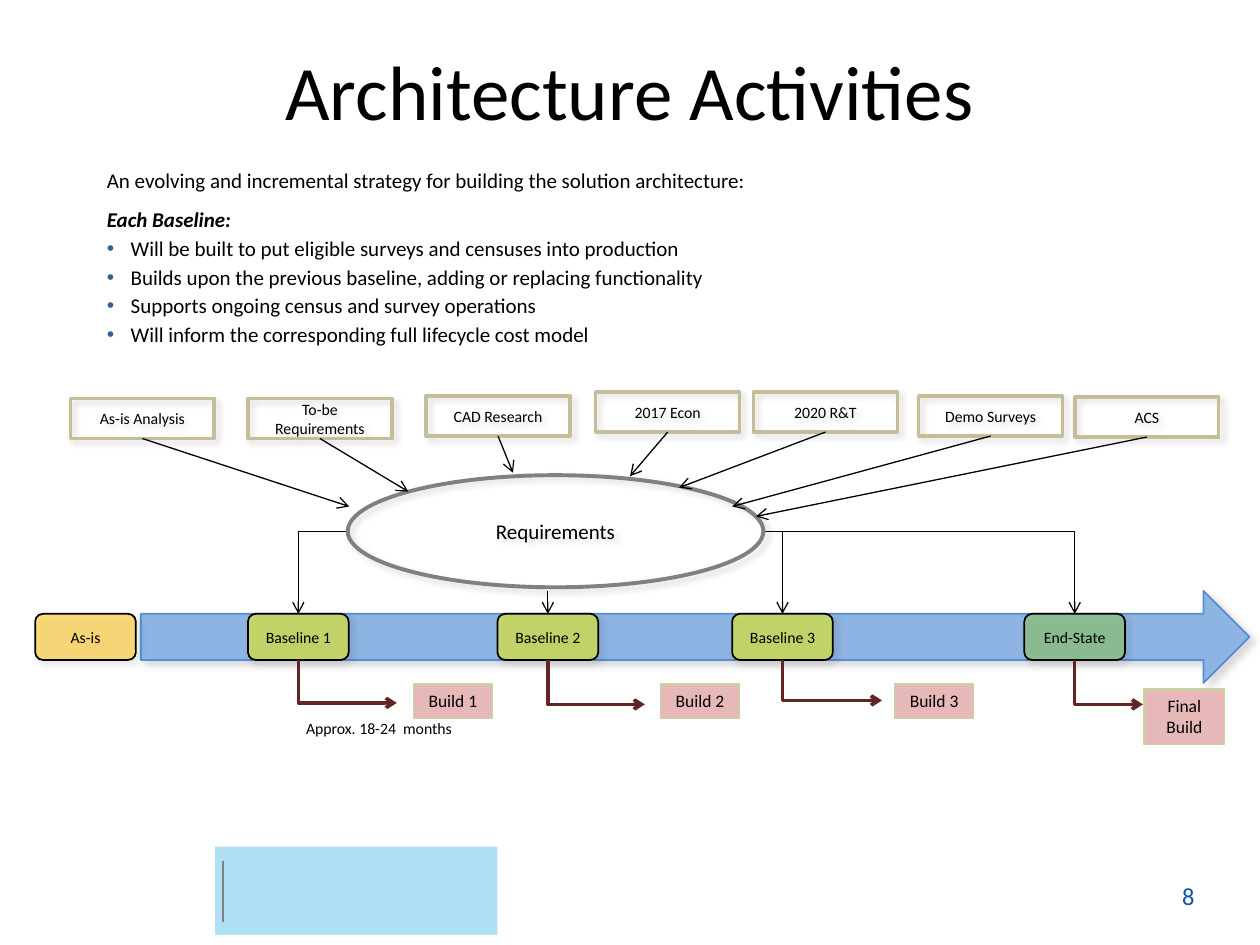
import pptx
import pptx.dml.color
import pptx.enum.shapes
import pptx.enum.text
import pptx.oxml
import pptx.oxml.ns
import pptx.util
from lxml import etree

Cm = pptx.util.Cm
Pt = pptx.util.Pt
RGBColor = pptx.dml.color.RGBColor
qn = pptx.oxml.ns.qn
SHAPE = pptx.enum.shapes.MSO_SHAPE
CONNECTOR = pptx.enum.shapes.MSO_CONNECTOR
ANCHOR = pptx.enum.text.MSO_ANCHOR
ALIGN = pptx.enum.text.PP_ALIGN
AUTO_SIZE = pptx.enum.text.MSO_AUTO_SIZE

BLACK = RGBColor(0x00, 0x00, 0x00)
GRAY = RGBColor(0x80, 0x80, 0x80)
SKY = RGBColor(0xB0, 0xE0, 0xF6)
NUMBER_BLUE = RGBColor(0x08, 0x58, 0xA8)
BULLET_BLUE = RGBColor(0x37, 0x60, 0x92)
ARROW_FILL = RGBColor(0x8E, 0xB4, 0xE3)
ARROW_LINE = RGBColor(0x55, 0x8E, 0xD5)
AMBER = RGBColor(0xFF, 0xC0, 0x00)
YELLOW = RGBColor(0xFF, 0xFF, 0x00)
GREEN = RGBColor(0x92, 0xD0, 0x50)
TAN = RGBColor(0xC4, 0xBD, 0x97)
MAROON = RGBColor(0x63, 0x25, 0x23)
PINK = RGBColor(0xE6, 0xB9, 0xB8)
LIGHT_GREEN = RGBColor(0xC3, 0xD6, 0x9B)

# Milestone label, colour, left within the timeline
MILESTONES = [("As-is", AMBER, 0), ("Baseline 1", YELLOW, 4.29), ("Baseline 2", YELLOW, 9.32),
              ("Baseline 3", YELLOW, 14.05), ("End-State", GREEN, 19.94)]
# Input label, left and top within the row, tip of its arrow from the ellipse's corner
INPUTS = [("As-is Analysis", 0, 0.13, 0.03, 0.63), ("To-be Requirements", 3.58, 0.13, 1.22, 0.33),
          ("CAD Research", 7.17, 0.08, 3.33, -0.05), ("2017 Econ", 10.59, 0, 5.69, 0.02),
          ("2020 R&T", 13.77, 0, 6.68, 0.25), ("Demo Surveys", 17.1, 0.08, 7.75, 0.63),
          ("ACS", 20.25, 0.1, 8.23, 0.83)]
# Build label, left from its milestone, top below the row, size, arrow gap, arrow drop
BUILDS = [("Build 1", 3.33, 0, 1.6, 0.69, 0.33, 0.38), ("Build 2", 3.28, 0, 1.6, 0.69, 0.31, 0.41),
          ("Build 3", 3.27, 0, 1.6, 0.69, 0.25, 0.33), ("Final Build", 2.41, 0.1, 1.63, 1.12, 0.02, 0.41)]


def write_text(paragraph, text, size=9, color=BLACK, bold=False, italic=False, align=ALIGN.LEFT):
    run = paragraph.add_run()
    run.text = text
    font = run.font
    font.name, font.size, font.bold, font.italic = "Calibri", Pt(size), bold, italic
    font.color.rgb = color
    paragraph.alignment = align


def move(shape, left, top, width, height):
    shape.left, shape.top, shape.width, shape.height = Cm(left), Cm(top), Cm(width), Cm(height)


def add_box(slide, kind, box, fill=None, alpha=None, line=None, width=1, shadow=True, text="", size=9):
    shape = slide.shapes.add_shape(kind, *map(Cm, box))
    if fill is None:
        shape.fill.background()
    else:
        shape.fill.solid()
        shape.fill.fore_color.rgb = fill
    properties = shape._element.spPr
    if alpha:
        color = properties.find(qn("a:solidFill"))[0]
        etree.SubElement(color, qn("a:alpha"), val=str(alpha * 1000))
    if line is None:
        shape.line.fill.background()
    else:
        shape.line.color.rgb = line
        shape.line.width = Pt(width)
    shape.shadow.inherit = False
    if shadow:
        outer = etree.SubElement(properties.find(qn("a:effectLst")), qn("a:outerShdw"), blurRad=str(Pt(4)),
                                 dist=str(Pt(3)), dir="2700000", algn="tl", rotWithShape="0")
        color = etree.SubElement(outer, qn("a:srgbClr"), val="000000")
        etree.SubElement(color, qn("a:alpha"), val="15000")
    if text:
        shape.text_frame.word_wrap = True
        shape.text_frame.vertical_anchor = ANCHOR.MIDDLE
        write_text(shape.text_frame.paragraphs[0], text, size=size, align=ALIGN.CENTER)
    return shape


def add_line(slide, start, end, color=BLACK, width=0.75, arrow=True, bend=None):
    """Draw a line; bend "across" goes sideways first, "down" goes down first."""
    kind = CONNECTOR.ELBOW if bend else CONNECTOR.STRAIGHT
    connector = slide.shapes.add_connector(kind, *map(Cm, start + end))
    connector.line.color.rgb = color
    connector.line.width = Pt(width)
    properties = connector._element.spPr
    if arrow:
        etree.SubElement(properties.find(qn("a:ln")), qn("a:tailEnd"), type="arrow")
    etree.SubElement(properties, qn("a:effectLst"))
    geometry = properties.find(qn("a:prstGeom"))
    if bend == "across":
        geometry.set("prst", "bentConnector2")
    elif bend == "down":
        guides = geometry.find(qn("a:avLst"))
        if guides is None:
            guides = etree.SubElement(geometry, qn("a:avLst"))
        etree.SubElement(guides, qn("a:gd"), name="adj1", fmla="val 0")
    return connector


def fill_title(slide, box):
    title = slide.shapes.title
    move(title, *box)
    title.text_frame.vertical_anchor = ANCHOR.TOP
    write_text(title.text_frame.paragraphs[0], "Architecture Activities", size=44, align=ALIGN.CENTER)


def set_bullet(paragraph, shown):
    properties = paragraph._p.get_or_add_pPr()
    indent = Cm(0.48) if shown else 0
    properties.set("marL", str(indent))
    properties.set("indent", str(-indent))
    if shown:
        color = etree.SubElement(properties, qn("a:buClr"))
        etree.SubElement(color, qn("a:srgbClr"), val=str(BULLET_BLUE))
        etree.SubElement(properties, qn("a:buFont"), typeface="Arial")
        etree.SubElement(properties, qn("a:buChar"), char="•")
    else:
        etree.SubElement(properties, qn("a:buNone"))


def fill_strategy(slide, box):
    body = slide.placeholders[1]
    move(body, *box)
    frame = body.text_frame
    frame.auto_size = AUTO_SIZE.SHAPE_TO_FIT_TEXT
    lines = ["An evolving and incremental strategy for building the solution architecture:",
             "Each Baseline:",
             "Will be built to put eligible surveys and censuses into production",
             "Builds upon the previous baseline, adding or replacing functionality",
             "Supports ongoing census and survey operations",
             "Will inform the corresponding full lifecycle cost model"]
    for index, text in enumerate(lines):
        paragraph = frame.paragraphs[0] if index == 0 else frame.add_paragraph()
        set_bullet(paragraph, index > 1)
        paragraph.line_spacing = 1.14
        paragraph.space_before = Pt(0)
        paragraph.space_after = Pt(6 if index == 0 else 0)
        write_text(paragraph, text, size=12, bold=index == 1, italic=index == 1)


def add_timeline(slide, box):
    """Draw the arrow and its milestones, and return the milestones after As-is."""
    left, top, width, height = box
    add_box(slide, SHAPE.RIGHT_ARROW, (left + 2.13, top, width - 2.13, height), ARROW_FILL, line=ARROW_LINE)
    milestones = [add_box(slide, SHAPE.ROUNDED_RECTANGLE, (left + offset, top + height / 4, 2.03, height / 2),
                          color, alpha=50, line=BLACK, text=label)
                  for label, color, offset in MILESTONES]
    return milestones[1:]


def add_requirements(slide, box, milestones):
    left, top, width, height = box
    for milestone, side in zip(milestones, (0, None, width, width)):
        center = milestone.left.cm + milestone.width.cm / 2
        end = (center, milestone.top.cm)
        if side is None:
            connector = add_line(slide, (center, top + height + 0.07), end)
            connector.end_connect(milestone, 0)
        else:
            add_line(slide, (left + side, top + height / 2), end, bend="across")
    add_box(slide, SHAPE.OVAL, box, line=GRAY, width=2.25, text="Requirements", size=12)


def add_inputs(slide, box, ellipse):
    left, top, _, height = box
    for label, x, y, tip_x, tip_y in INPUTS:
        source = add_box(slide, SHAPE.RECTANGLE, (left + x, top + y, 2.9, height), line=TAN, width=2, text=label)
        connector = add_line(slide, (left + x, top + y), (ellipse[0] + tip_x, ellipse[1] + tip_y))
        connector.begin_connect(source, 2)


def add_builds(slide, box, milestones):
    left, top, _, _ = box
    for milestone, (label, x, y, width, height, gap, drop) in zip(milestones, BUILDS):
        build_left = milestone.left.cm + x
        shape = add_box(slide, SHAPE.RECTANGLE, (build_left, top + y, width, height),
                        PINK, line=LIGHT_GREEN, width=0.75, shadow=False, text=label, size=10)
        shape.text_frame.vertical_anchor = ANCHOR.TOP
        start = (milestone.left.cm + milestone.width.cm / 2, milestone.top.cm + milestone.height.cm)
        add_line(slide, start, (build_left - gap, top + drop), MAROON, 2, bend="down")
    duration = slide.shapes.add_textbox(Cm(left), Cm(top + 0.26), Cm(3.68), Cm(0.81))
    duration.text_frame.word_wrap = False
    for text, size in (("Approx. 18-24", 9), (" ", 18), ("months", 9)):
        write_text(duration.text_frame.paragraphs[0], text, size=size)


def add_footer(slide, box):
    left, top, width, height = box
    add_box(slide, SHAPE.RECTANGLE, (left, top, 5.69, height), SKY, shadow=False)
    add_line(slide, (left + 0.16, top + 0.28), (left + 0.16, top + 1.52), GRAY, 1.25, arrow=False)
    number = slide.shapes.add_textbox(Cm(left + width - 5.28), Cm(top + 0.56), Cm(5.28), Cm(1.27))
    number.text_frame.word_wrap = True
    write_text(number.text_frame.paragraphs[0], "8", size=14, color=NUMBER_BLUE, align=ALIGN.RIGHT)


def main():
    presentation = pptx.Presentation()
    presentation.slide_width, presentation.slide_height = Cm(25.4), Cm(19.05)
    slide = presentation.slides.add_slide(presentation.slide_layouts[1])
    ellipse = (7.01, 9.58, 8.38, 2.26)
    add_footer(slide, (4.34, 17.07, 19.99, 1.78))
    fill_strategy(slide, (1.9, 3.18, 21.56, 3.99))
    milestones = add_timeline(slide, (0.71, 11.91, 24.48, 1.86))
    add_requirements(slide, ellipse, milestones)
    add_inputs(slide, (1.42, 7.9, 23.15, 0.81), ellipse)
    add_builds(slide, (5.92, 13.79, 18.77, 1.22), milestones)
    fill_title(slide, (1.27, 0.76, 22.86, 3.18))
    presentation.save("out.pptx")


if __name__ == "__main__":
    main()
